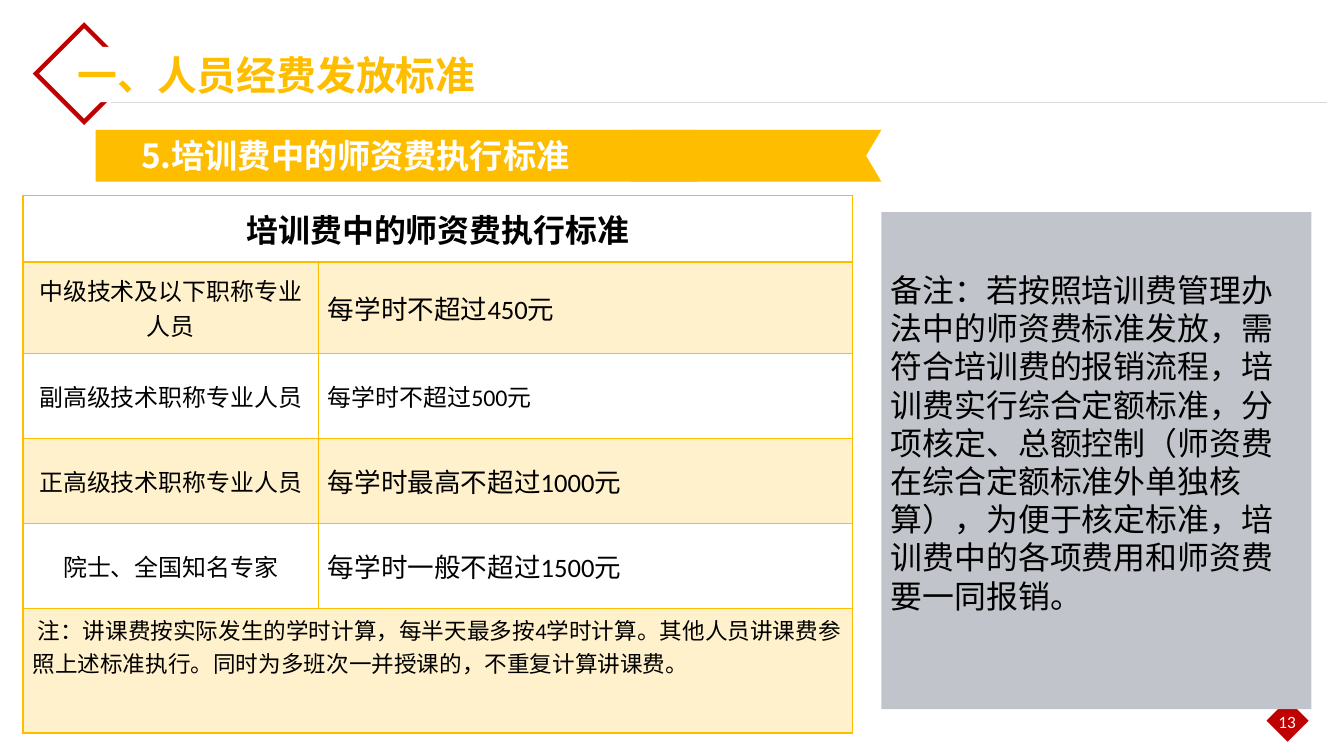
from dataclasses import dataclass

from lxml import etree
from pptx import Presentation
from pptx import util as u
from pptx.dml.color import RGBColor
from pptx.enum import shapes, text
from pptx.oxml import ns

PX = 9144  # 100 px to the inch
GOLD = RGBColor(0xFF, 0xBD, 0x00)
RED = RGBColor(0xC0, 0x00, 0x00)
GREY = RGBColor(0xC1, 0xC4, 0xCA)
RULE = RGBColor(0xD9, 0xD9, 0xD9)
WHITE = RGBColor(0xFF, 0xFF, 0xFF)
BLACK = RGBColor(0x00, 0x00, 0x00)
LATIN, CJK = "Calibri", "Noto Sans CJK SC"
LEFT, CENTER = text.PP_ALIGN.LEFT, text.PP_ALIGN.CENTER
TOP, MIDDLE = text.MSO_ANCHOR.TOP, text.MSO_ANCHOR.MIDDLE


@dataclass(frozen=True)
class Box:
    left: int
    top: int
    width: int
    height: int

    def emu(self) -> tuple[int, ...]:
        return tuple(n * PX for n in (self.left, self.top, self.width, self.height))


@dataclass(frozen=True)
class Block:
    kind: shapes.MSO_SHAPE
    box: Box
    color: RGBColor
    rotation: int = 0


@dataclass(frozen=True)
class Rate:
    rank: str
    fee: str
    height: int
    fee_size: int = 20


PAGE_DIAMOND = Block(shapes.MSO_SHAPE.DIAMOND, Box(1325, 732, 44, 44), RED)
TITLE_FRAME = Block(shapes.MSO_SHAPE.FRAME, Box(50, 39, 76, 76), RED, 45)
TITLE_BACKING = Block(shapes.MSO_SHAPE.RECTANGLE, Box(88, 49, 336, 58), WHITE)
RIBBON = Block(shapes.MSO_SHAPE.RECTANGLE, Box(100, 136, 630, 54), GOLD)
REMARK = Block(shapes.MSO_SHAPE.RECTANGLE, Box(922, 222, 450, 520), GREY)
RIBBON_TAIL = [(922, 136), (660, 136), (660, 190), (922, 190), (906, 163)]

TABLE_BOX = Box(24, 205, 868, 561)
COLUMNS = (309, 559)
HEADER_HEIGHT, FOOTNOTE_HEIGHT = 69, 130
RATES = (
    Rate("中级技术及以下职称专业人员", "每学时不超过450元", 96),
    Rate("副高级技术职称专业人员", "每学时不超过500元", 89, 18),
    Rate("正高级技术职称专业人员", "每学时最高不超过1000元", 89),
    Rate("院士、全国知名专家", "每学时一般不超过1500元", 89),
)
FOOTNOTE = (" 注：讲课费按实际发生的学时计算，每半天最多按4学时计算。其他人员讲课费"
            "参照上述标准执行。同时为多班次一并授课的，不重复计算讲课费。")
REMARK_TEXT = ("备注：若按照培训费管理办法中的师资费标准发放，需符合培训费的报销流程，"
               "培训费实行综合定额标准，分项核定、总额控制（师资费在综合定额标准外单独核算），"
               "为便于核定标准，培训费中的各项费用和师资费要一同报销。")


def write(frame, content: str, *, size: int, color: RGBColor = BLACK, bold: bool = False,
          font: str = LATIN, align=LEFT, line_spacing=None) -> None:
    paragraph = frame.paragraphs[0]
    paragraph.alignment = align
    paragraph.line_spacing = line_spacing
    run = paragraph.add_run()
    run.text = content
    run.font.size = u.Pt(size)
    run.font.bold = bold
    run.font.name = font
    run.font.color.rgb = color
    etree.SubElement(run.font._element, ns.qn("a:ea"), typeface=CJK)


def paint(shape, color: RGBColor) -> None:
    shape.fill.solid()
    shape.fill.fore_color.rgb = color
    shape.line.fill.background()
    shape.shadow.inherit = False


def add_block(slide, block: Block):
    shape = slide.shapes.add_shape(block.kind, *block.box.emu())
    paint(shape, block.color)
    shape.rotation = block.rotation
    return shape


def add_label(slide, box: Box, content: str, **style) -> None:
    frame = slide.shapes.add_textbox(*box.emu()).text_frame
    frame.word_wrap = True
    frame.vertical_anchor = MIDDLE
    write(frame, content, **style)


def add_rule(slide) -> None:
    rule = slide.shapes.add_connector(shapes.MSO_CONNECTOR.STRAIGHT,
                                      *(n * PX for n in (116, 107, 1388, 107)))
    rule.line.color.rgb = RULE
    rule.line.width = u.Pt(0.5)
    etree.SubElement(rule._element.spPr, ns.qn("a:effectLst"))


def add_ribbon_tail(slide) -> None:
    builder = slide.shapes.build_freeform(*RIBBON_TAIL[0], scale=PX)
    builder.add_line_segments(RIBBON_TAIL[1:], close=True)
    paint(builder.convert_to_shape(), GOLD)


def style_cell(cell, tinted: bool, top: int = 1, bottom: int = 1) -> None:
    """Set the fill (gold at 20 % opacity, or none) and the gold borders in points."""
    if tinted:
        cell.fill.solid()
        cell.fill.fore_color.rgb = GOLD
    else:
        cell.fill.background()
    properties = cell._tc.get_or_add_tcPr()
    for color in properties.iter(ns.qn("a:srgbClr")):
        etree.SubElement(color, ns.qn("a:alpha"), val="20000")
    for place, (side, width) in enumerate(zip("LRTB", (1, 1, top, bottom))):
        border = etree.Element(ns.qn(f"a:ln{side}"), w=str(u.Pt(width)))
        solid = etree.SubElement(border, ns.qn("a:solidFill"))
        etree.SubElement(solid, ns.qn("a:srgbClr"), val=str(GOLD))
        properties.insert(place, border)


def add_rate_table(slide) -> None:
    heights = (HEADER_HEIGHT, *(rate.height for rate in RATES), FOOTNOTE_HEIGHT)
    last = len(heights) - 1
    table = slide.shapes.add_table(len(heights), len(COLUMNS), *TABLE_BOX.emu()).table
    table.first_row = table.horz_banding = False
    for column, width in zip(table.columns, COLUMNS):
        column.width = width * PX
    for index, height in enumerate(heights):
        table.rows[index].height = height * PX
        for cell in table.rows[index].cells:
            style_cell(cell, tinted=index % 2 == 1, top=2 if index == 1 else 1,
                       bottom=2 if index == 0 else 1)
            cell.vertical_anchor = MIDDLE if index < last else TOP
    for index in (0, last):
        table.cell(index, 0).merge(table.cell(index, 1))

    write(table.cell(0, 0).text_frame, "培训费中的师资费执行标准", size=24, bold=True, align=CENTER)
    for index, rate in enumerate(RATES, start=1):
        write(table.cell(index, 0).text_frame, rate.rank, size=18, align=CENTER)
        write(table.cell(index, 1).text_frame, rate.fee, size=rate.fee_size)
    write(table.cell(last, 0).text_frame, FOOTNOTE, size=17)


def add_title(slide) -> None:
    title = slide.shapes.title
    title.left, title.top, title.width, title.height = Box(71, 48, 454, 61).emu()
    frame = title.text_frame
    frame.auto_size = text.MSO_AUTO_SIZE.NONE
    frame.word_wrap = False
    frame.vertical_anchor = MIDDLE
    write(frame, "一、人员经费发放标准", size=30, color=GOLD, bold=True, font=CJK)
    slide.shapes._spTree.append(title._element)  # in front of its white backing


def add_remark(slide) -> None:
    frame = add_block(slide, REMARK).text_frame
    frame.word_wrap = True
    frame.vertical_anchor = TOP
    frame.margin_top = 61 * PX
    write(frame, REMARK_TEXT, size=24, line_spacing=u.Pt(28.8))


def main() -> None:
    deck = Presentation()
    deck.slide_width, deck.slide_height = 1406 * PX, 791 * PX
    slide = deck.slides.add_slide(deck.slide_layouts.get_by_name("Title Only"))
    add_block(slide, PAGE_DIAMOND)
    add_label(slide, Box(1320, 738, 53, 33), "13", size=13, color=WHITE, align=CENTER)
    add_block(slide, TITLE_FRAME).adjustments[0] = 0.06
    add_block(slide, TITLE_BACKING)
    add_rule(slide)
    add_title(slide)
    add_ribbon_tail(slide)
    add_block(slide, RIBBON)
    add_label(slide, Box(138, 136, 724, 53), "5.培训费中的师资费执行标准",
              size=25, color=WHITE, bold=True, font=CJK)
    add_rate_table(slide)
    add_remark(slide)
    deck.save("out.pptx")


if __name__ == "__main__":
    main()
